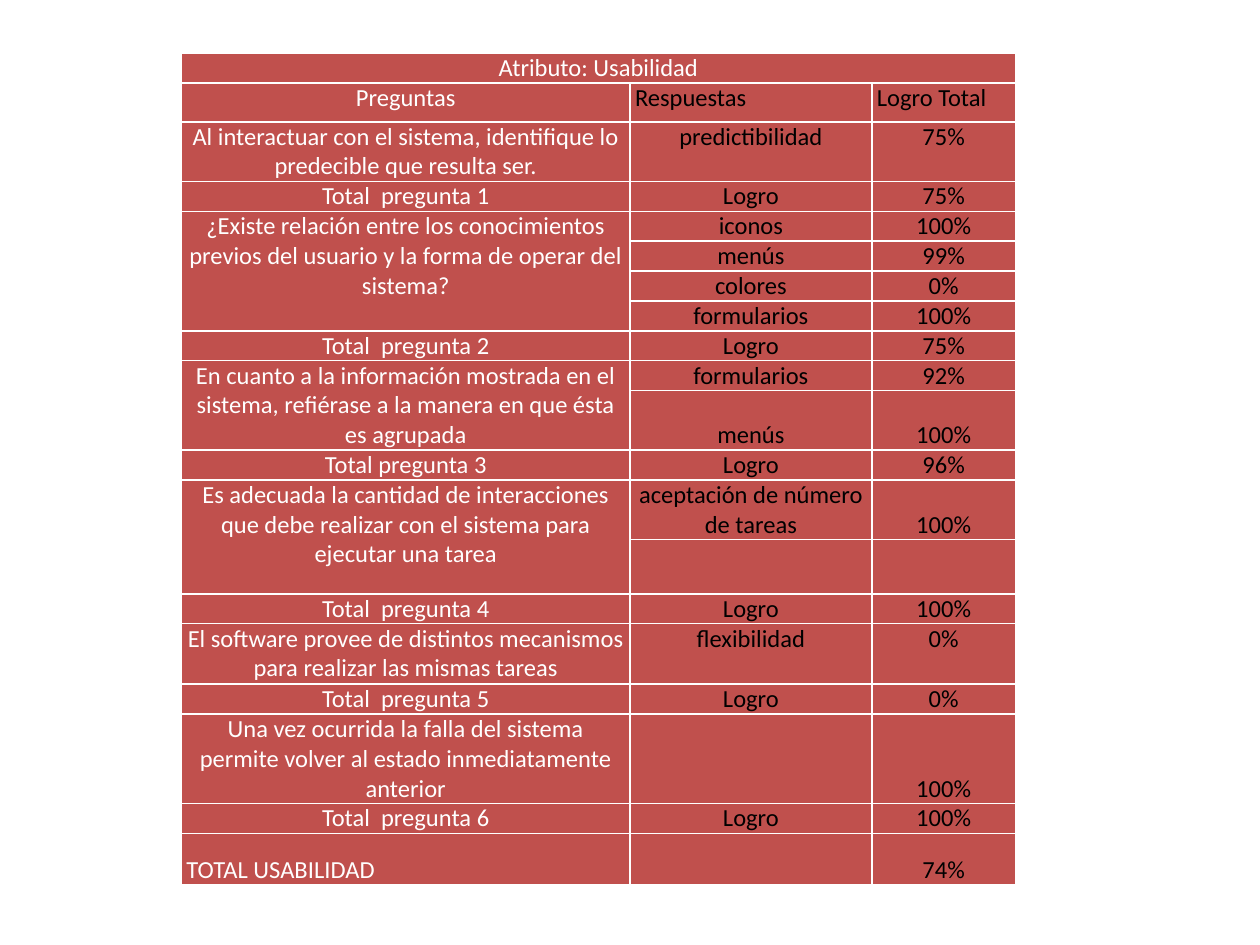
from lxml import etree
from pptx import Presentation
from pptx.dml.color import RGBColor
from pptx.enum.text import MSO_ANCHOR, PP_ALIGN
from pptx.oxml.ns import qn
from pptx.util import Inches, Pt

TOP, BOTTOM = MSO_ANCHOR.TOP, MSO_ANCHOR.BOTTOM
LEFT, CENTER = PP_ALIGN.LEFT, PP_ALIGN.CENTER
WHITE = RGBColor(0xFF, 0xFF, 0xFF)
BLACK = RGBColor(0, 0, 0)
RED = RGBColor(0xC0, 0x50, 0x4D)

COL_WIDTHS = [3.56, 1.92, 1.14]
LEFT_ALIGNED = {"Respuestas", "Logro Total", "TOTAL USABILIDAD"}

# height, anchor of the answers, question (None continues the one above), answer, score
ROWS = [
    (0.21, BOTTOM, "Atributo: Usabilidad", "", ""),
    (0.31, TOP, "Preguntas", "Respuestas", "Logro Total"),
    (0.38, TOP, "Al interactuar con el sistema, identifique lo predecible que resulta ser.",
     "predictibilidad", "75%"),
    (0.2, BOTTOM, "Total  pregunta 1", "Logro", "75%"),
    (0.2, BOTTOM, "¿Existe relación entre los conocimientos previos del usuario "
     "y la forma de operar del sistema?", "iconos", "100%"),
    (0.2, BOTTOM, None, "menús", "99%"),
    (0.2, BOTTOM, None, "colores", "0%"),
    (0.2, BOTTOM, None, "formularios", "100%"),
    (0.2, BOTTOM, "Total  pregunta 2", "Logro", "75%"),
    (0.2, BOTTOM, "En cuanto a la información mostrada en el sistema, refiérase "
     "a la manera en que ésta es agrupada", "formularios", "92%"),
    (0.4, BOTTOM, None, "menús", "100%"),
    (0.2, BOTTOM, "Total pregunta 3", "Logro", "96%"),
    (0.45, BOTTOM, "Es adecuada la cantidad de interacciones que debe realizar "
     "con el sistema para ejecutar una tarea", "aceptación de número de tareas", "100%"),
    (0.43, BOTTOM, None, "", ""),
    (0.2, BOTTOM, "Total  pregunta 4", "Logro", "100%"),
    (0.48, TOP, "El software provee de distintos mecanismos para realizar las mismas tareas",
     "flexibilidad", "0%"),
    (0.2, BOTTOM, "Total  pregunta 5", "Logro", "0%"),
    (0.38, BOTTOM, "Una vez ocurrida la falla del sistema permite volver al estado "
     "inmediatamente anterior", "", "100%"),
    (0.21, BOTTOM, "Total  pregunta 6", "Logro", "100%"),
    (0.2, BOTTOM, "TOTAL USABILIDAD", "", "74%"),
]


class SlideBuilder:
    font = "Calibri"
    size = Pt(14)
    border_width = Pt(1)

    def __init__(self, slide):
        self.slide = slide

    def table(self, left, top, height, col_widths, rows):
        frame = self.slide.shapes.add_table(
            len(rows), len(col_widths), Inches(left), Inches(top),
            Inches(sum(col_widths)), Inches(height))
        table = frame.table
        table.horz_banding = False
        for column, width in zip(table.columns, col_widths):
            column.width = Inches(width)
        for i, (row_height, anchor, *texts) in enumerate(rows):
            table.rows[i].height = Inches(row_height)
            for j, text in enumerate(texts):
                is_question = j == 0 and 0 < i and not (text or "").upper().startswith("TOTAL")
                self.cell(table.cell(i, j), text, TOP if is_question else anchor,
                          BLACK if j else WHITE)
        frame.height = Inches(height)
        return table

    def cell(self, cell, text, anchor, color):
        cell.fill.solid()
        cell.fill.fore_color.rgb = RED
        self.borders(cell)
        if not text:
            return
        cell.vertical_anchor = anchor
        cell.margin_left = cell.margin_right = Inches(0.04)
        cell.margin_top = cell.margin_bottom = 0
        p = cell.text_frame.paragraphs[0]
        p.alignment = LEFT if text in LEFT_ALIGNED else CENTER
        r = p.add_run()
        r.text = text
        r.font.name = self.font
        r.font.size = self.size
        r.font.color.rgb = color

    def borders(self, cell):
        props = cell._tc.get_or_add_tcPr()
        for i, side in enumerate(("a:lnL", "a:lnR", "a:lnT", "a:lnB")):
            line = etree.Element(qn(side), w=str(self.border_width))
            fill = etree.SubElement(line, qn("a:solidFill"))
            etree.SubElement(fill, qn("a:srgbClr"), val=str(WHITE))
            props.insert(i, line)


def merge_questions(table, rows):
    """Merge each question with the rows that continue it."""
    start = 0
    for i, row in enumerate(rows):
        if row[2] is not None:
            start = i
        elif i + 1 == len(rows) or rows[i + 1][2] is not None:
            table.cell(start, 0).merge(table.cell(i, 0))


def main():
    prs = Presentation()
    prs.slide_width, prs.slide_height = Inches(10), Inches(7.5)
    s = SlideBuilder(prs.slides.add_slide(prs.slide_layouts[6]))
    table = s.table(1.44, 0.42, 6.57, COL_WIDTHS, ROWS)
    table.cell(0, 0).merge(table.cell(0, len(COL_WIDTHS) - 1))
    merge_questions(table, ROWS)
    prs.save("out.pptx")


if __name__ == "__main__":
    main()
